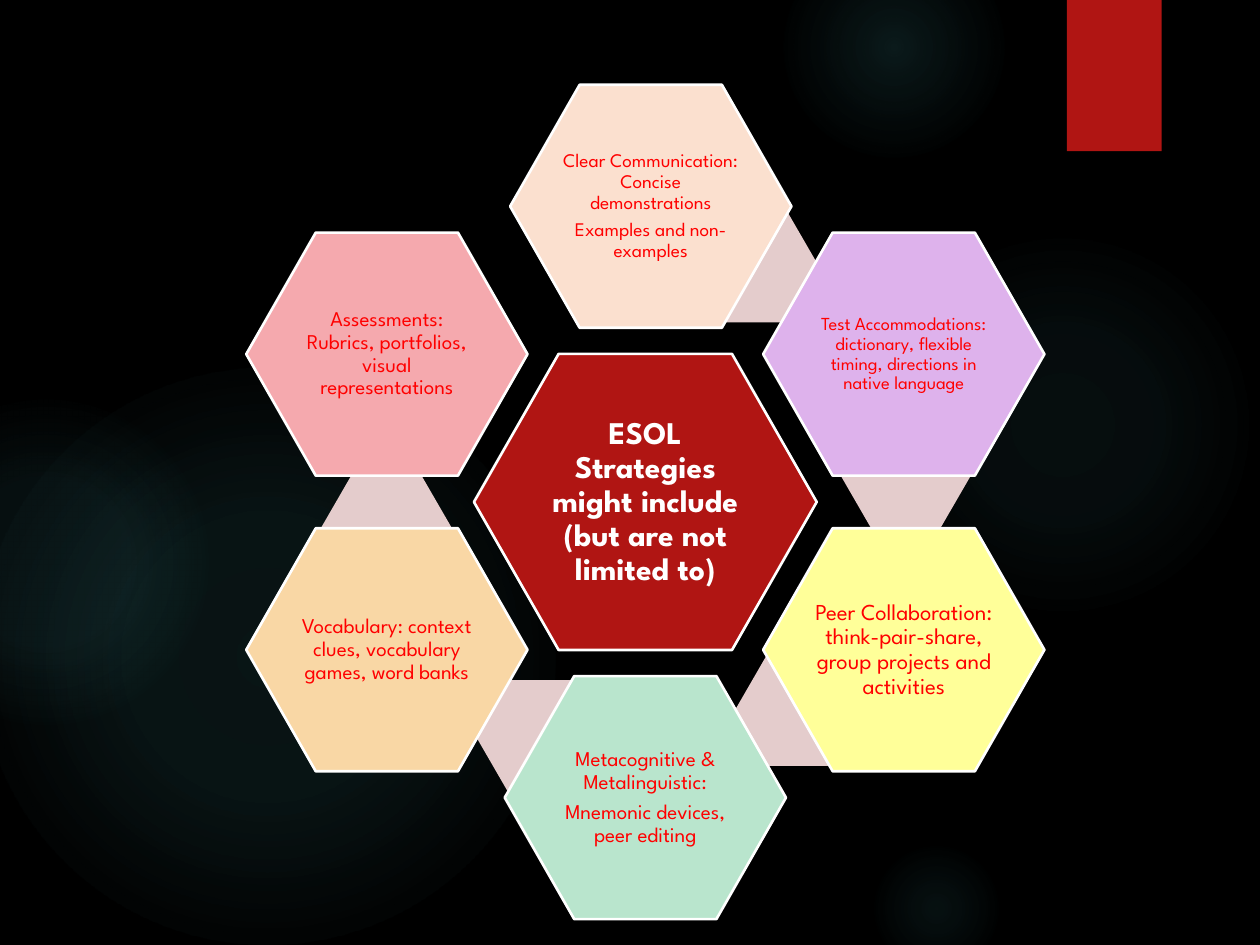
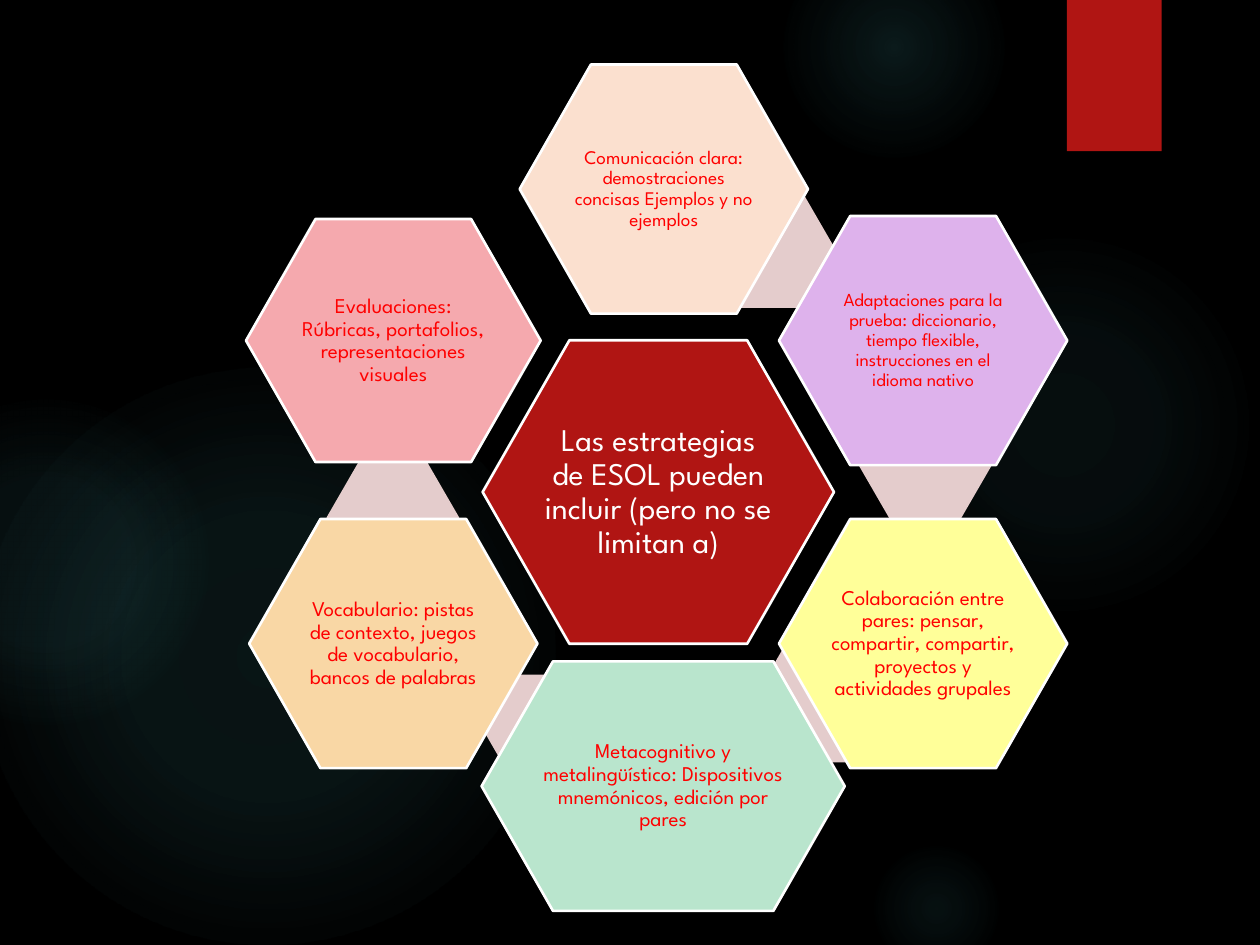
import pptx
import pptx.dml.color
import pptx.enum.shapes
import pptx.enum.text
import pptx.oxml
import pptx.oxml.ns
import pptx.util

Cm = pptx.util.Cm
Pt = pptx.util.Pt
MSO_SHAPE = pptx.enum.shapes.MSO_SHAPE

COLORS = {
    "back": "000000",
    "glow": "50B9C1",
    "accent": "B01513",
    "link": "E4CCCC",
    "white": "FFFFFF",
    "text": "FF0000",
    "peach": "FBE0CF",
    "violet": "DEB2EC",
    "yellow": "FFFF99",
    "mint": "B9E5CD",
    "sand": "F9D7A5",
    "pink": "F5A9AE",
}

GLOWS = [
    (17.5, 4.65, 7.82, [(0, 7), (36, 6), (69, 0)]),
    (15.8, -1.27, 4.45, [(0, 14), (36, 7), (73, 0)]),
    (17.5, 16.94, 2.74, [(0, 9), (36, 5), (66, 0)]),
    (-0.43, 7.42, 11.63, [(0, 11), (36, 10), (75, 0)]),
    (-2.34, 8.05, 6.55, [(0, 8), (36, 8), (72, 0)]),
]

HUB_SIZE = (6.91, 5.97)
PETAL_SIZE = (5.67, 4.9)
LINK_SIZE = (2.61, 2.24)
RING_X, RING_Y = 5.21, 2.98
PETALS = [
    ("peach", 0.11, -2 * RING_Y),
    ("violet", RING_X, -RING_Y),
    ("yellow", RING_X, RING_Y),
    ("mint", 0, 2 * RING_Y),
    ("sand", -RING_X, RING_Y),
    ("pink", -RING_X, -RING_Y),
]
LINKS = [(2.2, -4.74), (5.25, -0.52), (3.11, 4.2), (-2.12, 4.71), (-5.22, 0.5)]

ENGLISH = {
    "center": (13.01, 10.12),
    "scale": 1,
    "hub": "ESOL Strategies might include (but are not limited to)",
    "bold": True,
    "petals": [
        ("Clear Communication: Concise demonstrations\nExamples and non-examples", 11),
        ("Test Accommodations: dictionary, flexible timing, directions in native language", 10.5),
        ("Peer Collaboration: think-pair-share, group projects and activities", 13),
        ("Metacognitive & Metalinguistic:\nMnemonic devices, peer editing", 12),
        ("Vocabulary: context clues, vocabulary games, word banks", 12),
        ("Assessments: Rubrics, portfolios, visual representations", 12),
    ],
    "resized": {},
}

SPANISH = {
    "center": (13.27, 9.92),
    "scale": 1.025,
    "hub": "Las estrategias de ESOL pueden incluir (pero no se limitan a)",
    "bold": False,
    "petals": [
        ("Comunicación clara: demostraciones concisas Ejemplos y no ejemplos", 11),
        ("Adaptaciones para la prueba: diccionario, tiempo flexible, "
         "instrucciones en el idioma nativo", 10.5),
        ("Colaboración entre pares: pensar, compartir, compartir, "
         "proyectos y actividades grupales", 12),
        ("Metacognitivo y metalingüístico: Dispositivos mnemónicos, edición por pares", 12),
        ("Vocabulario: pistas de contexto, juegos de vocabulario, bancos de palabras", 12),
        ("Evaluaciones: Rúbricas, portafolios, representaciones visuales", 12),
    ],
    "resized": {"mint": (0.1, -0.18, 7.32, 5.03), "pink": (0, 0, 5.94, 4.9)},
}


def rgb(name):
    return pptx.dml.color.RGBColor.from_string(COLORS[name])


def xml(body):
    tag, rest = body.split(" ", 1)
    return pptx.oxml.parse_xml(f"{tag} {pptx.oxml.ns.nsdecls('a')} {rest}")


class Deck:
    font = "League Spartan"

    def __init__(self):
        self.prs = pptx.Presentation()
        self.prs.slide_width = Cm(25.4)
        self.prs.slide_height = Cm(19.05)
        self.s = None

    def slide(self):
        self.s = self.prs.slides.add_slide(self.prs.slide_layouts[6])
        self.s.background.fill.solid()
        self.s.background.fill.fore_color.rgb = rgb("back")
        for glow in GLOWS:
            self.glow(*glow)
        self.band()

    def shape(self, kind, x, y, w, h, color):
        sp = self.s.shapes.add_shape(kind, Cm(x), Cm(y), Cm(w), Cm(h))
        sp.shadow.inherit = False
        sp.line.fill.background()
        sp.fill.solid()
        sp.fill.fore_color.rgb = rgb(color)
        return sp

    def glow(self, x, y, size, stops):
        sp = self.shape(MSO_SHAPE.OVAL, x, y, size, size, "glow")
        gs = "".join(
            f'<a:gs pos="{pos * 1000}"><a:srgbClr val="{COLORS["glow"]}">'
            f'<a:alpha val="{alpha * 1000}"/></a:srgbClr></a:gs>'
            for pos, alpha in stops
        )
        spPr = sp._element.spPr
        spPr.replace(spPr.find(pptx.oxml.ns.qn("a:solidFill")), xml(
            f'<a:gradFill rotWithShape="1"><a:gsLst>{gs}</a:gsLst><a:path path="circle">'
            '<a:fillToRect l="50000" t="50000" r="50000" b="50000"/></a:path></a:gradFill>'))

    def band(self):
        sp = self.shape(MSO_SHAPE.RECTANGLE, 21.51, 0, 1.91, 3.05, "accent")
        sp._element.spPr.find(pptx.oxml.ns.qn("a:effectLst")).append(xml(
            f'<a:outerShdw blurRad="{Pt(3)}" dist="{Pt(2)}" dir="5400000">'
            f'<a:srgbClr val="{COLORS["back"]}"><a:alpha val="45000"/></a:srgbClr></a:outerShdw>'))

    def hexagon(self, cx, cy, w, h, color, adj=0.286):
        sp = self.shape(MSO_SHAPE.HEXAGON, cx - w / 2, cy - h / 2, w, h, color)
        sp.adjustments[0] = adj
        return sp

    def label(self, sp, text, size, color, inset, bold=False):
        sp.line.color.rgb = rgb("white")
        sp.line.width = Pt(1.5)
        tf = sp.text_frame
        tf.word_wrap = True
        tf.vertical_anchor = pptx.enum.text.MSO_ANCHOR.MIDDLE
        tf.margin_left = tf.margin_right = tf.margin_top = tf.margin_bottom = Cm(inset)
        tf.text = text
        for p in tf.paragraphs:
            p.alignment = pptx.enum.text.PP_ALIGN.CENTER
            p.line_spacing = 0.9
            p.space_after = Pt(size * 0.35)
            for r in p.runs:
                r.font.name = self.font
                r.font.size = Pt(size)
                r.font.bold = bold
                r.font.color.rgb = rgb(color)

    def flower(self, content):
        cx, cy = content["center"]
        k = content["scale"]
        hub = self.hexagon(cx, cy, HUB_SIZE[0] * k, HUB_SIZE[1] * k, "accent")
        self.label(hub, content["hub"], 18, "white", 0.08, content["bold"])
        for dx, dy in LINKS:
            self.hexagon(cx + dx * k, cy + dy * k, LINK_SIZE[0] * k, LINK_SIZE[1] * k, "link", 0.289)
        regular = (0, 0, PETAL_SIZE[0] * k, PETAL_SIZE[1] * k)
        for (color, dx, dy), (text, size) in zip(PETALS, content["petals"]):
            shift_x, shift_y, w, h = content["resized"].get(color, regular)
            petal = self.hexagon(cx + dx * k + shift_x, cy + dy * k + shift_y, w, h, color)
            self.label(petal, text, size, "text", 0.05)


def main():
    deck = Deck()
    for content in (ENGLISH, SPANISH):
        deck.slide()
        deck.flower(content)
    deck.prs.save("out.pptx")


if __name__ == "__main__":
    main()
